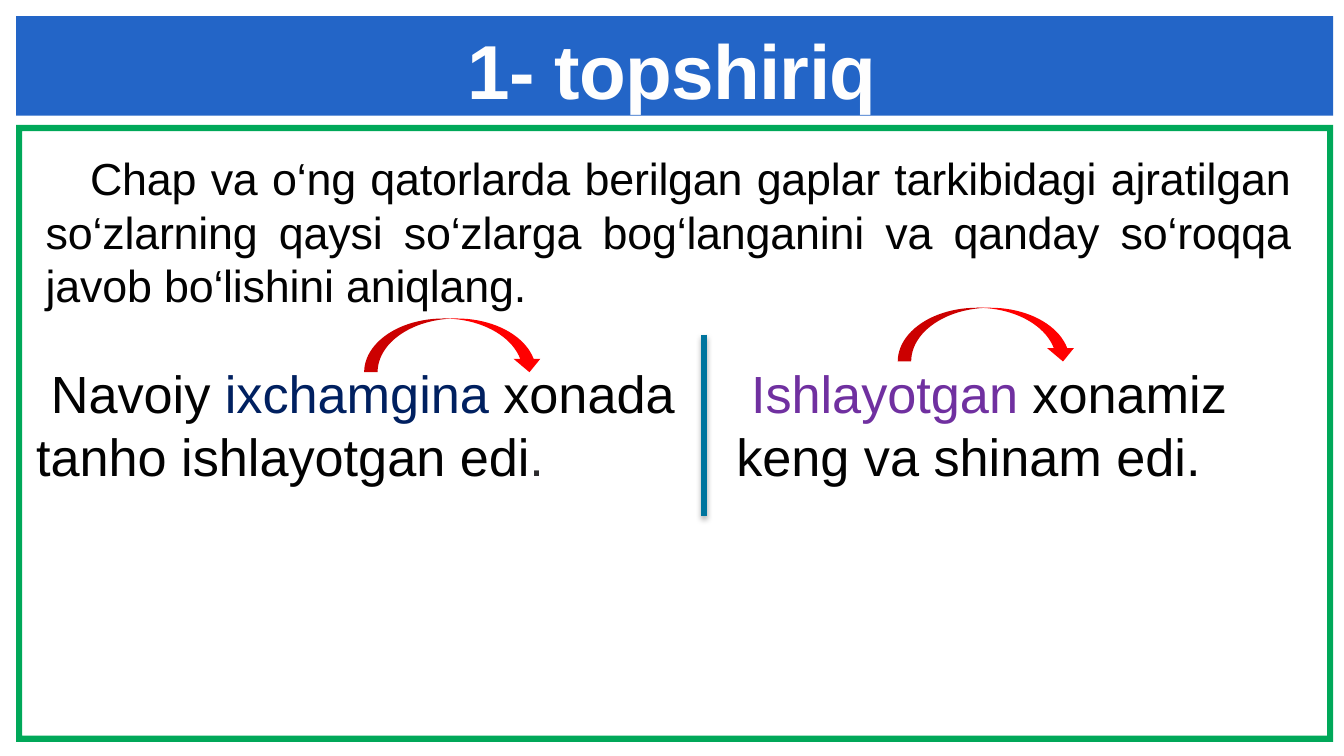
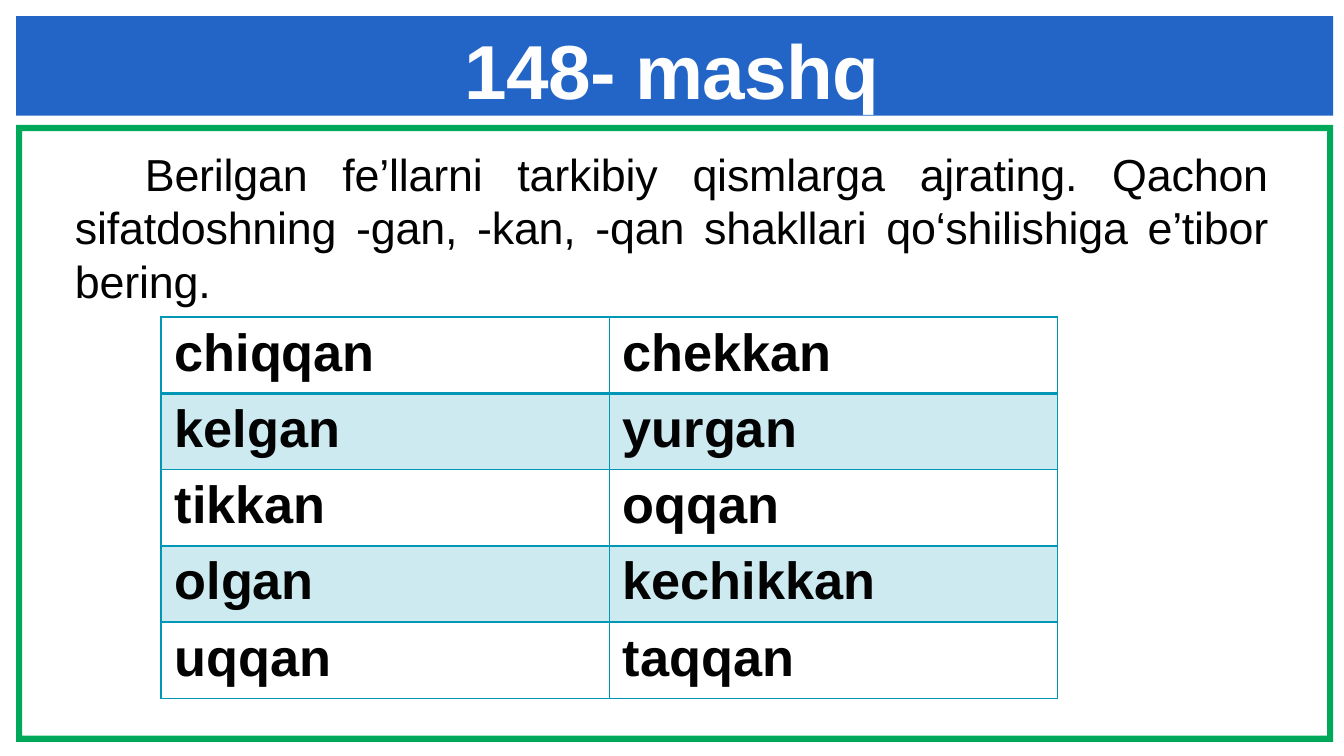
from lxml.etree import SubElement
from pptx import Presentation
from pptx.dml.color import RGBColor
from pptx.enum.shapes import MSO_CONNECTOR, MSO_SHAPE
from pptx.enum.text import MSO_ANCHOR, MSO_AUTO_SIZE, PP_ALIGN
from pptx.oxml import parse_xml
from pptx.oxml.ns import nsdecls, qn
from pptx.util import Inches, Pt

FONT = "Arial"
WHITE = RGBColor(0xFE, 0xFE, 0xFE)
BLACK = RGBColor(0x02, 0x02, 0x02)
CHARCOAL = RGBColor(0x2C, 0x2B, 0x2D)
BLUE = RGBColor(0x23, 0x65, 0xC7)
GREEN = RGBColor(0x00, 0xA8, 0x59)
NAVY = RGBColor(0x00, 0x20, 0x60)
PURPLE = RGBColor(0x70, 0x30, 0xA0)
RED = RGBColor(0xFF, 0x00, 0x00)
DIVIDER_BLUE = RGBColor(0x00, 0x75, 0x9E)
TEAL = RGBColor(0x00, 0x97, 0xB7)

# Content
TASK_TITLE = "1- topshiriq"
TASK_TEXT = (
    "Chap va o‘ng qatorlarda berilgan gaplar tarkibidagi ajratilgan "
    "so‘zlarning qaysi so‘zlarga bog‘langanini va qanday so‘roqqa "
    "javob bo‘lishini aniqlang."
)
# Each example: box, then paragraphs of (first-line indent, coloured runs)
EXAMPLES = [
    ((0.17, 2.64, 5.08, 1.04), [
        (0.11, [("Navoiy ", BLACK), ("ixchamgina", NAVY),
                (" xonada tanho ishlayotgan edi", BLACK), (".", CHARCOAL)]),
    ]),
    ((5.38, 2.64, 4.39, 1.04), [
        (0.11, [("Ishlayotgan", PURPLE), (" xonamiz", BLACK)]),
        (0, [("keng va shinam edi.", BLACK)]),
    ]),
]
ARROW_CORNERS = [(2.71, 2.37), (6.68, 2.29)]

EXERCISE_TITLE = "148- mashq"
EXERCISE_TEXT = (
    "Berilgan fe’llarni tarkibiy qismlarga ajrating. Qachon "
    "sifatdoshning -gan, -kan, -qan shakllari qo‘shilishiga e’tibor bering."
)
VERBS = [
    ("chiqqan", "chekkan"),
    ("kelgan", "yurgan"),
    ("tikkan", "oqqan"),
    ("olgan", "kechikkan"),
    ("uqqan", "taqqan"),
]


def inches(box):
    return [Inches(length) for length in box]


def place(shape, box):
    shape.left, shape.top, shape.width, shape.height = inches(box)


def format_run(run, size, color, bold=False, spacing=0):
    font = run.font
    font.name, font.size, font.bold = FONT, Pt(size), bold
    font.color.rgb = color
    if spacing:
        run._r.get_or_add_rPr().set("spc", str(round(spacing * 100)))


def indent_first_line(paragraph, indent):
    properties = paragraph._p.get_or_add_pPr()
    properties.set("marL", "0")
    properties.set("indent", str(Inches(indent)))
    return properties


def clear_margins(text_frame):
    text_frame.margin_left = text_frame.margin_right = 0
    text_frame.margin_top = text_frame.margin_bottom = 0


def add_filled_shape(slide, kind, box, color):
    shape = slide.shapes.add_shape(kind, *inches(box))
    shape.fill.solid()
    shape.fill.fore_color.rgb = color
    shape.line.fill.background()
    shape.shadow.inherit = False
    return shape


def add_text_box(slide, box):
    text_box = slide.shapes.add_textbox(*inches(box))
    text_box.text_frame.word_wrap = True
    text_box.text_frame.auto_size = MSO_AUTO_SIZE.SHAPE_TO_FIT_TEXT
    return text_box


def add_titled_slide(presentation, layout_index, title_text):
    """Slide with the green frame, the blue band and the white title."""
    slide = presentation.slides.add_slide(presentation.slide_layouts[layout_index])
    frame = add_filled_shape(slide, MSO_SHAPE.FRAME, (0.12, 0.93, 9.8, 4.59), GREEN)
    frame.adjustments[0] = 0.01
    band = add_filled_shape(slide, MSO_SHAPE.RECTANGLE, (0.12, 0.12, 9.8, 0.74), BLUE)
    for backdrop in (band, frame):
        slide.shapes._spTree.insert(2, backdrop._element)

    title = slide.shapes.title
    place(title, (0.75, 0.23, 8.5, 0.67))
    text_frame = title.text_frame
    text_frame.text = title_text
    text_frame.auto_size = MSO_AUTO_SIZE.NONE
    text_frame.vertical_anchor = MSO_ANCHOR.MIDDLE
    clear_margins(text_frame)
    paragraph = text_frame.paragraphs[0]
    paragraph.alignment = PP_ALIGN.CENTER
    paragraph.line_spacing = 0.86
    format_run(paragraph.runs[0], 41, WHITE, bold=True, spacing=-0.4)
    return slide


def write_instruction(text_frame, text, indent):
    text_frame.text = text
    paragraph = text_frame.paragraphs[0]
    paragraph.alignment = PP_ALIGN.JUSTIFY
    paragraph.space_before = Pt(2.5)
    SubElement(indent_first_line(paragraph, indent), qn("a:buNone"))
    format_run(paragraph.runs[0], 24, BLACK, spacing=-0.1)


def add_example(slide, box, paragraphs):
    text_frame = add_text_box(slide, box).text_frame
    for index, (indent, runs) in enumerate(paragraphs):
        paragraph = text_frame.add_paragraph() if index else text_frame.paragraphs[0]
        indent_first_line(paragraph, indent)
        for text, color in runs:
            run = paragraph.add_run()
            run.text = text
            format_run(run, 28, color)


def add_divider(slide):
    x, top, bottom = inches((5.24, 2.49, 3.84))
    divider = slide.shapes.add_connector(MSO_CONNECTOR.STRAIGHT, x, top, x, bottom)
    divider.line.color.rgb = DIVIDER_BLUE
    divider.line.width = Pt(3)
    divider._element.spPr.append(parse_xml(
        f'<a:effectLst {nsdecls("a")}>'
        f'<a:outerShdw blurRad="{Pt(3.1)}" dist="{Pt(1.8)}" dir="5400000" rotWithShape="0">'
        '<a:srgbClr val="000000"><a:alpha val="35000"/></a:srgbClr>'
        '</a:outerShdw></a:effectLst>'
    ))


def set_borders(cell, widths):
    """Widths in points for the left, right, top and bottom edges."""
    properties = cell._tc.get_or_add_tcPr()
    for index, (side, width) in enumerate(zip("LRTB", widths)):
        properties.insert(index, parse_xml(
            f'<a:ln{side} {nsdecls("a")} w="{Pt(width)}"><a:solidFill>'
            f'<a:srgbClr val="{TEAL}"/></a:solidFill></a:ln{side}>'
        ))


def fill_cell(cell, tinted):
    if not tinted:
        cell.fill.background()
        return
    cell.fill.solid()
    cell.fill.fore_color.rgb = TEAL
    for color in cell._tc.tcPr.iter(qn("a:srgbClr")):
        SubElement(color, qn("a:alpha")).set("val", "20000")


def add_verb_table(slide):
    box = inches((1.2, 2.36, 6.67, 2.83))
    table = slide.shapes.add_table(len(VERBS), len(VERBS[0]), *box).table
    table.first_row = table.horz_banding = False
    for row, verbs in enumerate(VERBS):
        for column, verb in enumerate(verbs):
            cell = table.cell(row, column)
            cell.text = verb
            format_run(cell.text_frame.paragraphs[0].runs[0], 28, BLACK, bold=True)
            fill_cell(cell, tinted=row % 2 == 1)
            set_borders(cell, (1, 1, 2 if row == 1 else 1, 2 if row == 0 else 1))


def build_task_slide(presentation):
    slide = add_titled_slide(presentation, 1, TASK_TITLE)
    body = slide.placeholders[1]
    place(body, (0.34, 1.12, 9.26, 1.21))
    clear_margins(body.text_frame)
    body.text_frame.auto_size = MSO_AUTO_SIZE.SHAPE_TO_FIT_TEXT
    write_instruction(body.text_frame, TASK_TEXT, 0.33)
    for box, paragraphs in EXAMPLES:
        add_example(slide, box, paragraphs)
    add_divider(slide)
    for left, top in ARROW_CORNERS:
        add_filled_shape(slide, MSO_SHAPE.CURVED_DOWN_ARROW, (left, top, 1.33, 0.4), RED)


def build_exercise_slide(presentation):
    slide = add_titled_slide(presentation, 5, EXERCISE_TITLE)
    instruction = add_text_box(slide, (0.46, 1.04, 9.07, 1.31))
    write_instruction(instruction.text_frame, EXERCISE_TEXT, 0.52)
    add_verb_table(slide)


def main():
    presentation = Presentation()
    # Widescreen, 16 to 9
    presentation.slide_width = Inches(10)
    presentation.slide_height = Inches(10) * 9 // 16
    build_task_slide(presentation)
    build_exercise_slide(presentation)
    presentation.save("out.pptx")


if __name__ == "__main__":
    main()
